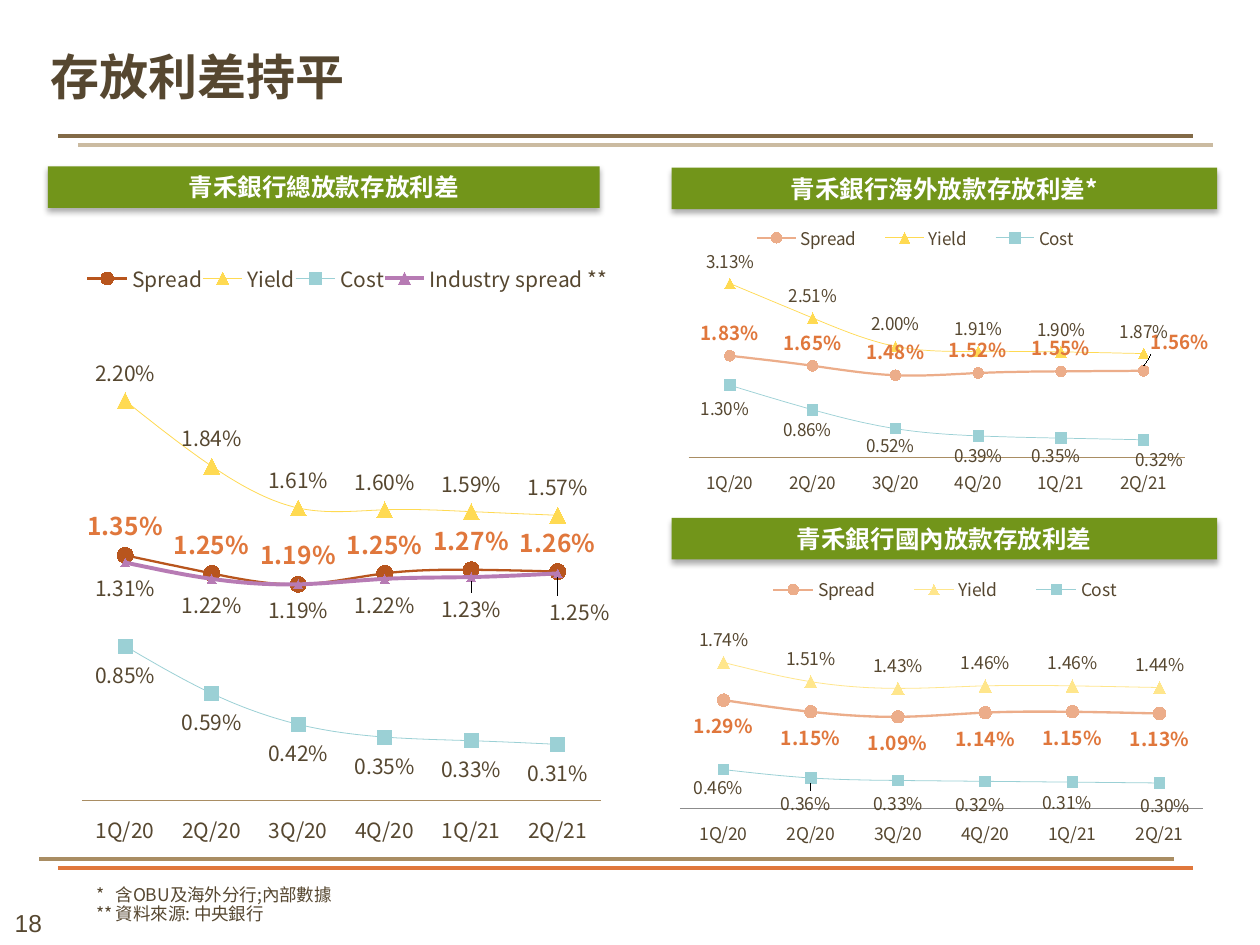
from lxml import etree
from pptx import Presentation
from pptx.chart.data import CategoryChartData
from pptx.dml.color import RGBColor
from pptx.enum.chart import (XL_CHART_TYPE, XL_LABEL_POSITION, XL_LEGEND_POSITION,
                             XL_MARKER_STYLE, XL_TICK_LABEL_POSITION, XL_TICK_MARK)
from pptx.enum.shapes import MSO_CONNECTOR, MSO_SHAPE
from pptx.enum.text import MSO_ANCHOR, PP_ALIGN
from pptx.oxml import parse_xml
from pptx.oxml.ns import nsdecls, qn
from pptx.util import Inches, Pt

ABOVE, BELOW = XL_LABEL_POSITION.ABOVE, XL_LABEL_POSITION.BELOW
CIRCLE, TRIANGLE, SQUARE = (XL_MARKER_STYLE.CIRCLE, XL_MARKER_STYLE.TRIANGLE,
                            XL_MARKER_STYLE.SQUARE)
CJK = "Noto Sans CJK SC"
INK, ORANGE, GREEN, WHITE = "564730", "E0773C", "72951A", "FFFFFF"
YELLOW, TEAL, PEACH, PURPLE = "FFDA52", "9BD0D5", "ECAD8A", "B77BB4"
PERCENT = "0.00%"

TITLE = "存放利差持平"
PAGE_NUMBER = "18"
FOOTNOTES = ["*\t含OBU及海外分行;內部數據", "**\t資料來源: 中央銀行"]
RULES = [  # left, top, colour
    (0.46, 6.89, ORANGE), (0.31, 6.82, "A98D63"),
    (0.62, 1.15, "CBBBA1"), (0.46, 1.08, "826A47")]
RULE_LENGTH = 9.01
BANNERS = [  # left, top, width, text
    (5.33, 1.33, 4.33, "青禾銀行海外放款存放利差*"),
    (0.38, 1.32, 4.38, "青禾銀行總放款存放利差"),
    (5.33, 4.11, 4.33, "青禾銀行國內放款存放利差")]
QUARTERS = ["1Q/20", "2Q/20", "3Q/20", "4Q/20", "1Q/21", "2Q/21"]

# Series: name, percentages, colour, line width, marker, marker size,
# label position, labels emphasised, {point: label offset as chart fractions}
CHARTS = [
    dict(box=(0.56, 1.9, 4.31, 5.17), size=12, bold_size=14, top=0.025, axis="A98D63",
         plot=(0.021, 0.164, 0.956, 0.698), legend=(0.03, 0.035, 0.96, 0.05),
         series=[
             ("Spread", [1.35, 1.25, 1.19, 1.25, 1.27, 1.26], "B8551D", 1.31,
              CIRCLE, 9, ABOVE, True, {}),
             ("Yield", [2.20, 1.84, 1.61, 1.60, 1.59, 1.57], YELLOW, 0.44,
              TRIANGLE, 9, ABOVE, False, {}),
             ("Cost", [0.85, 0.59, 0.42, 0.35, 0.33, 0.31], TEAL, 0.44,
              SQUARE, 8, BELOW, False, {}),
             ("Industry spread **", [1.31, 1.22, 1.19, 1.22, 1.23, 1.25], PURPLE, 2.25,
              TRIANGLE, 5, BELOW, False, {4: (0, 0.01), 5: (0.04, 0.02)})]),
    dict(box=(5.37, 1.67, 4.23, 2.29), size=10, bold_size=11, top=0.035, axis="A98D63",
         plot=(0.023, 0.182, 0.956, 0.675), legend=(0.11, 0.05, 0.7, 0.09),
         series=[
             ("Spread", [1.83, 1.65, 1.48, 1.52, 1.55, 1.56], PEACH, 1.29,
              CIRCLE, 6, ABOVE, True, {5: (0.07, -0.02)}),
             ("Yield", [3.13, 2.51, 2.00, 1.91, 1.90, 1.87], YELLOW, 0.43,
              TRIANGLE, 6, ABOVE, False, {}),
             ("Cost", [1.30, 0.86, 0.52, 0.39, 0.35, 0.32], TEAL, 0.43,
              SQUARE, 6, BELOW, False,
              {0: (-0.01, 0), 1: (-0.01, -0.01), 2: (-0.01, -0.02),
               3: (0, -0.01), 4: (-0.01, -0.02), 5: (0.03, -0.01)})]),
    dict(box=(5.31, 4.56, 4.34, 2.18), size=10, bold_size=11, top=0.02, axis="8C8C8C",
         plot=(0.02, 0.241, 0.957, 0.61), legend=(0.13, 0.01, 0.75, 0.09),
         series=[
             ("Spread", [1.29, 1.15, 1.09, 1.14, 1.15, 1.13], PEACH, 1.32,
              CIRCLE, 7, BELOW, True, {}),
             ("Yield", [1.74, 1.51, 1.43, 1.46, 1.46, 1.44], "FFE68C", 0.44,
              TRIANGLE, 7, ABOVE, False, {}),
             ("Cost", [0.46, 0.36, 0.33, 0.32, 0.31, 0.30], TEAL, 0.44,
              SQUARE, 6, BELOW, False,
              {0: (-0.01, -0.02), 1: (-0.01, 0.01), 2: (0, 0),
               3: (-0.01, 0), 4: (-0.01, -0.01), 5: (0.01, 0)})]),
]


def rgb(value):
    return RGBColor.from_string(value)


def set_font(font, size, colour, name=CJK, bold=False):
    font.name, font.size, font.bold = name, Pt(size), bold
    font.color.rgb = rgb(colour)


def add_run(paragraph, text, size, colour, name=CJK, bold=False):
    run = paragraph.add_run()
    run.text = text
    set_font(run.font, size, colour, name, bold)
    etree.SubElement(run.font._element, qn("a:ea"), typeface=CJK)


def set_margins(frame, horizontal, vertical):
    frame.margin_left = frame.margin_right = Inches(horizontal)
    frame.margin_top = frame.margin_bottom = Inches(vertical)


def manual_layout(values, modes=""):
    """Return a c:layout element placing x, y and optionally w, h."""
    parts = "".join(f'<c:{key} val="{value}"/>' for key, value in zip("xywh", values))
    return parse_xml(f'<c:layout {nsdecls("c")}><c:manualLayout>{modes}{parts}'
                     '</c:manualLayout></c:layout>')


def format_labels(labels, chart_info, position, emphasised):
    size = chart_info["bold_size"] if emphasised else chart_info["size"]
    set_font(labels.font, size, ORANGE if emphasised else INK, bold=emphasised)
    labels.position = position


def format_series(series, chart_info, details):
    _, _, colour, width, marker, marker_size, position, emphasised, offsets = details
    series.smooth = True
    series.format.line.color.rgb = rgb(colour)
    series.format.line.width = Pt(width)
    series.marker.style, series.marker.size = marker, marker_size
    series.marker.format.fill.solid()
    series.marker.format.fill.fore_color.rgb = rgb(colour)
    series.marker.format.line.color.rgb = rgb(colour)
    labels = series.data_labels
    labels.show_value = True
    labels.number_format, labels.number_format_is_linked = PERCENT, False
    format_labels(labels, chart_info, position, emphasised)
    for index, offset in offsets.items():
        format_labels(series.points[index].data_label, chart_info, position, emphasised)
        element = series._element.xpath(f'c:dLbls/c:dLbl[c:idx/@val="{index}"]')[0]
        element.insert(1, manual_layout(offset))
        element.insert(2, parse_xml(f'<c:numFmt {nsdecls("c")} formatCode="{PERCENT}" '
                                    'sourceLinked="0"/>'))


def add_spread_chart(slide, info):
    data = CategoryChartData(number_format=PERCENT)
    data.categories = QUARTERS
    for name, percentages, *_ in info["series"]:
        data.add_series(name, [round(value / 100, 4) for value in percentages])
    chart = slide.shapes.add_chart(XL_CHART_TYPE.LINE_MARKERS,
                                   *map(Inches, info["box"]), data).chart
    set_font(chart.font, info["size"], INK)
    chart.has_title = False
    chart.has_legend = True
    chart.legend.position = XL_LEGEND_POSITION.TOP
    chart.legend.include_in_layout = False
    edges = '<c:xMode val="edge"/><c:yMode val="edge"/>'
    legend = chart.legend._element
    for old in legend.findall(qn("c:layout")):
        legend.remove(old)
    legend.find(qn("c:legendPos")).addnext(manual_layout(info["legend"], edges))
    plot_area = chart._chartSpace.chart.plotArea
    for old in plot_area.findall(qn("c:layout")):
        plot_area.remove(old)
    inner = '<c:layoutTarget val="inner"/>'
    plot_area.insert(0, manual_layout(info["plot"], inner + edges))

    value_axis, category_axis = chart.value_axis, chart.category_axis
    value_axis.minimum_scale, value_axis.maximum_scale = 0, info["top"]
    value_axis.has_major_gridlines = False
    value_axis.visible = False
    category_axis.major_tick_mark = XL_TICK_MARK.NONE
    category_axis.tick_label_position = XL_TICK_LABEL_POSITION.LOW
    category_axis.format.line.color.rgb = rgb(info["axis"])
    category_axis.format.line.width = Pt(0.44)
    for series, details in zip(chart.plots[0].series, info["series"]):
        format_series(series, info, details)


def add_rule(slide, left, top, colour):
    line = slide.shapes.add_connector(MSO_CONNECTOR.STRAIGHT, Inches(left), Inches(top),
                                      Inches(left + RULE_LENGTH), Inches(top))
    line.line.color.rgb = rgb(colour)
    line.line.width = Pt(2.25)
    etree.SubElement(line._element.spPr, qn("a:effectLst"))


def add_banner(slide, left, top, width, text):
    banner = slide.shapes.add_shape(MSO_SHAPE.RECTANGLE, Inches(left), Inches(top),
                                    Inches(width), Inches(0.33))
    banner.fill.solid()
    banner.fill.fore_color.rgb = rgb(GREEN)
    banner.line.fill.background()
    banner._element.spPr.append(parse_xml(
        f'<a:effectLst {nsdecls("a")}><a:outerShdw blurRad="{Pt(3.5)}" dist="{Pt(2.2)}" '
        'dir="5400000" rotWithShape="0"><a:srgbClr val="000000"><a:alpha val="32000"/>'
        '</a:srgbClr></a:outerShdw></a:effectLst>'))
    frame = banner.text_frame
    frame.word_wrap = False
    frame.vertical_anchor = MSO_ANCHOR.MIDDLE
    frame.paragraphs[0].alignment = PP_ALIGN.CENTER
    add_run(frame.paragraphs[0], text, 14, WHITE, bold=True)


def add_title(slide):
    title = slide.shapes.title
    title.left, title.top, title.width, title.height = map(Inches, (0.4, 0.08, 9.41, 0.76))
    frame = title.text_frame
    set_margins(frame, 0, 0)
    frame.vertical_anchor = MSO_ANCHOR.BOTTOM
    paragraph = frame.paragraphs[0]
    paragraph.alignment = PP_ALIGN.LEFT
    paragraph.line_spacing = Pt(40)
    add_run(paragraph, TITLE, 28, INK, "Arial", True)


def add_footnotes(slide):
    frame = slide.shapes.add_textbox(*map(Inches, (0.67, 7.01, 9.33, 0.36))).text_frame
    frame.word_wrap = True
    set_margins(frame, 0.1, 0.02)
    for index, text in enumerate(FOOTNOTES):
        paragraph = frame.add_paragraph() if index else frame.paragraphs[0]
        paragraph.line_spacing = Pt(11)
        properties = paragraph._p.get_or_add_pPr()
        properties.set("marL", str(Inches(0.15)))
        properties.set("indent", str(-Inches(0.15)))
        add_run(paragraph, text, 10, INK)


def add_page_number(slide):
    frame = slide.shapes.add_textbox(*map(Inches, (-0.17, 7.16, 0.79, 0.34))).text_frame
    frame.word_wrap = True
    frame.paragraphs[0].alignment = PP_ALIGN.CENTER
    add_run(frame.paragraphs[0], PAGE_NUMBER, 14, INK, "Arial")


presentation = Presentation()
presentation.slide_width, presentation.slide_height = Inches(10), Inches(7.5)
slide = presentation.slides.add_slide(presentation.slide_layouts[5])
add_page_number(slide)
for rule in RULES:
    add_rule(slide, *rule)
add_title(slide)
add_footnotes(slide)
for banner in BANNERS:
    add_banner(slide, *banner)
for chart_info in CHARTS:
    add_spread_chart(slide, chart_info)
presentation.save("out.pptx")
